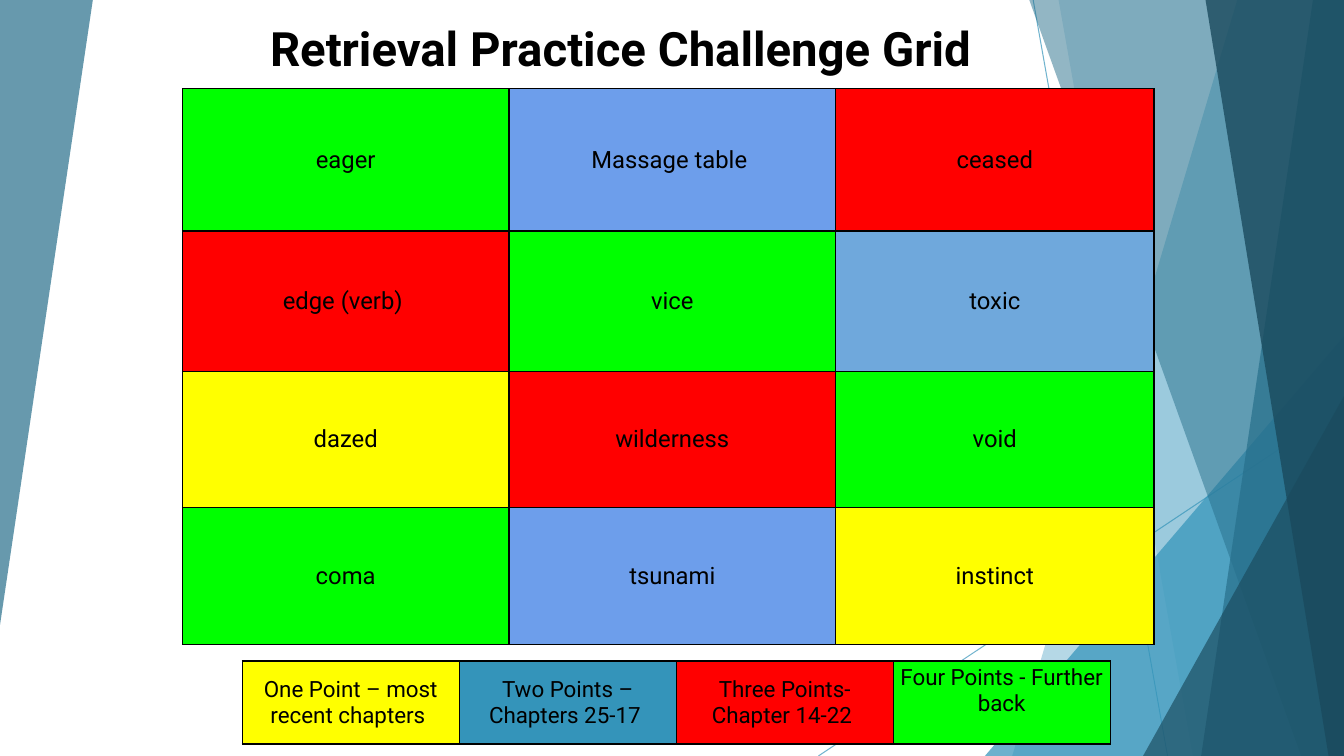
from dataclasses import dataclass

from lxml.etree import SubElement
from pptx import Presentation
from pptx.dml.color import RGBColor
from pptx.enum.shapes import MSO_CONNECTOR as Connector, MSO_SHAPE as Preset
from pptx.enum.text import MSO_ANCHOR as Anchor, MSO_AUTO_SIZE as AutoSize, PP_ALIGN as Align
from pptx.oxml.ns import qn
from pptx.util import Pt


@dataclass(frozen=True)
class Theme:
    font: str = "Roboto"
    title_size: float = 33.8
    grid_size: float = 17
    legend_size: float = 16
    inset: float = 3
    ink: str = "000000"
    teal: str = "3494BA"
    deep_teal: str = "276F8B"
    dark_teal: str = "1A4A5D"
    yellow: str = "FFFF00"
    red: str = "FF0000"
    green: str = "00FF00"
    periwinkle: str = "6D9EEB"
    sky: str = "6FA8DC"


class SlideBuilder:
    def __init__(self, page, theme):
        self.page = page
        self.theme = theme

    def format_text(self, frame, size, bold=False):
        for para in frame.paragraphs:
            para.alignment = Align.CENTER
            for span in para.runs:
                span.font.name = self.theme.font
                span.font.size = Pt(size)
                span.font.bold = bold
                span.font.color.rgb = RGBColor.from_string(self.theme.ink)

    def set_opacity(self, shape, percent):
        for color in shape.element.iter(qn("a:srgbClr")):
            SubElement(color, qn("a:alpha"), val=str(percent * 1000))

    def paint(self, shape, color, opacity):
        shape.shadow.inherit = False
        shape.fill.solid()
        shape.fill.fore_color.rgb = RGBColor.from_string(color)
        shape.line.fill.background()
        self.set_opacity(shape, opacity)

    def line(self, start, end, color, opacity):
        ends = [Pt(value) for value in (*start, *end)]
        connector = self.page.shapes.add_connector(Connector.STRAIGHT, *ends)
        connector.line.width = Pt(0.75)
        connector.line.color.rgb = RGBColor.from_string(color)
        SubElement(connector.element.spPr, qn("a:effectLst"))
        self.set_opacity(connector, opacity)

    def polygon(self, points, color, opacity):
        first, *others = [(Pt(x), Pt(y)) for x, y in points]
        builder = self.page.shapes.build_freeform(*first)
        builder.add_line_segments(others, close=True)
        self.paint(builder.convert_to_shape(), color, opacity)

    def right_triangle(self, left, top, width, height, color, opacity, rotation=0):
        area = [Pt(value) for value in (left, top, width, height)]
        triangle = self.page.shapes.add_shape(Preset.ISOSCELES_TRIANGLE, *area)
        triangle.adjustments[0] = 1
        triangle.rotation = rotation
        self.paint(triangle, color, opacity)

    def title(self, text, left, top, width, height):
        box = self.page.shapes.title
        box.left, box.top, box.width, box.height = map(Pt, (left, top, width, height))
        frame = box.text_frame
        frame.text = text
        frame.word_wrap = True
        frame.auto_size = AutoSize.SHAPE_TO_FIT_TEXT
        frame.vertical_anchor = Anchor.MIDDLE
        frame.margin_left = frame.margin_right = Pt(self.theme.inset)
        frame.margin_top = frame.margin_bottom = Pt(self.theme.inset)
        self.format_text(frame, self.theme.title_size, bold=True)
        # Bring the title in front of the backdrop
        box.element.getparent().append(box.element)

    def cell_borders(self, cell):
        properties = cell._tc.get_or_add_tcPr()
        for side in ("lnL", "lnR", "lnT", "lnB"):
            border = SubElement(properties, qn(f"a:{side}"), w=str(Pt(1)))
            fill = SubElement(border, qn("a:solidFill"))
            SubElement(fill, qn("a:srgbClr"), val=self.theme.ink)

    def table(self, left, top, widths, heights, rows, size):
        area = [Pt(value) for value in (left, top, sum(widths), sum(heights))]
        table = self.page.shapes.add_table(len(heights), len(widths), *area).table
        table.first_row = table.horz_banding = False
        for column, width in zip(table.columns, widths):
            column.width = Pt(width)
        for row, height, entries in zip(table.rows, heights, rows):
            row.height = Pt(height)
            for cell, (text, color) in zip(row.cells, entries):
                self.cell_borders(cell)
                cell.fill.solid()
                cell.fill.fore_color.rgb = RGBColor.from_string(color)
                cell.margin_left = cell.margin_right = Pt(self.theme.inset)
                cell.margin_top = cell.margin_bottom = Pt(self.theme.inset)
                cell.vertical_anchor = Anchor.MIDDLE
                cell.text_frame.text = text
                self.format_text(cell.text_frame, size)
        return table


def draw_backdrop(slide, theme):
    right, bottom, top = 960, 540, -0.7
    slide.line((738, 0), (834, bottom), theme.teal, 70)
    slide.line((right, 290), (584.6, bottom), theme.teal, 70)

    # Each band runs from a slanted left edge to the right side of the slide
    def band(top_x, bottom_x, color, opacity):
        corners = [(top_x, top), (right, top), (right, bottom), (bottom_x, bottom)]
        slide.polygon(corners, color, opacity)

    band(884, 723, theme.teal, 36)
    band(756, 852, theme.teal, 20)
    slide.right_triangle(703.5, 240, 256.5, 300, theme.teal, 72)
    band(735, 929.5, theme.deep_teal, 50)
    band(938, 858, theme.deep_teal, 70)
    band(861, 949, theme.dark_teal, 80)
    slide.right_triangle(816.5, 283, 143.5, 257, theme.dark_teal, 66)
    slide.right_triangle(0, 0, 66.3, 446.4, theme.deep_teal, 70, rotation=180)


def main():
    theme = Theme()
    deck = Presentation()
    deck.slide_width, deck.slide_height = Pt(960), Pt(540)
    slide = SlideBuilder(deck.slides.add_slide(deck.slide_layouts[5]), theme)

    draw_backdrop(slide, theme)

    # Points legend
    legend = [[
        ("One Point – most recent chapters ", theme.yellow),
        ("Two Points – Chapters 25-17 ", theme.teal),
        ("Three Points- Chapter 14-22 ", theme.red),
        ("Four Points - Further back", theme.green),
    ]]
    key = slide.table(173, 472.2, [155] * 4, [59.2], legend, theme.legend_size)
    key.cell(0, 3).vertical_anchor = Anchor.TOP

    slide.title("Retrieval Practice Challenge Grid ", 143.3, 10.8, 609, 46.8)

    # Challenge words
    words = [
        [("eager", theme.green), ("Massage table ", theme.periwinkle), ("ceased", theme.red)],
        [("edge (verb) ", theme.red), ("vice", theme.green), ("toxic", theme.sky)],
        [("dazed", theme.yellow), ("wilderness", theme.red), ("void", theme.green)],
        [("coma", theme.green), ("tsunami", theme.periwinkle), ("instinct", theme.yellow)],
    ]
    slide.table(130.3, 63.5, [233.3, 233.3, 227.4], [101.5, 100.2, 97.5, 97.5],
                words, theme.grid_size)

    deck.save("out.pptx")


if __name__ == "__main__":
    main()
